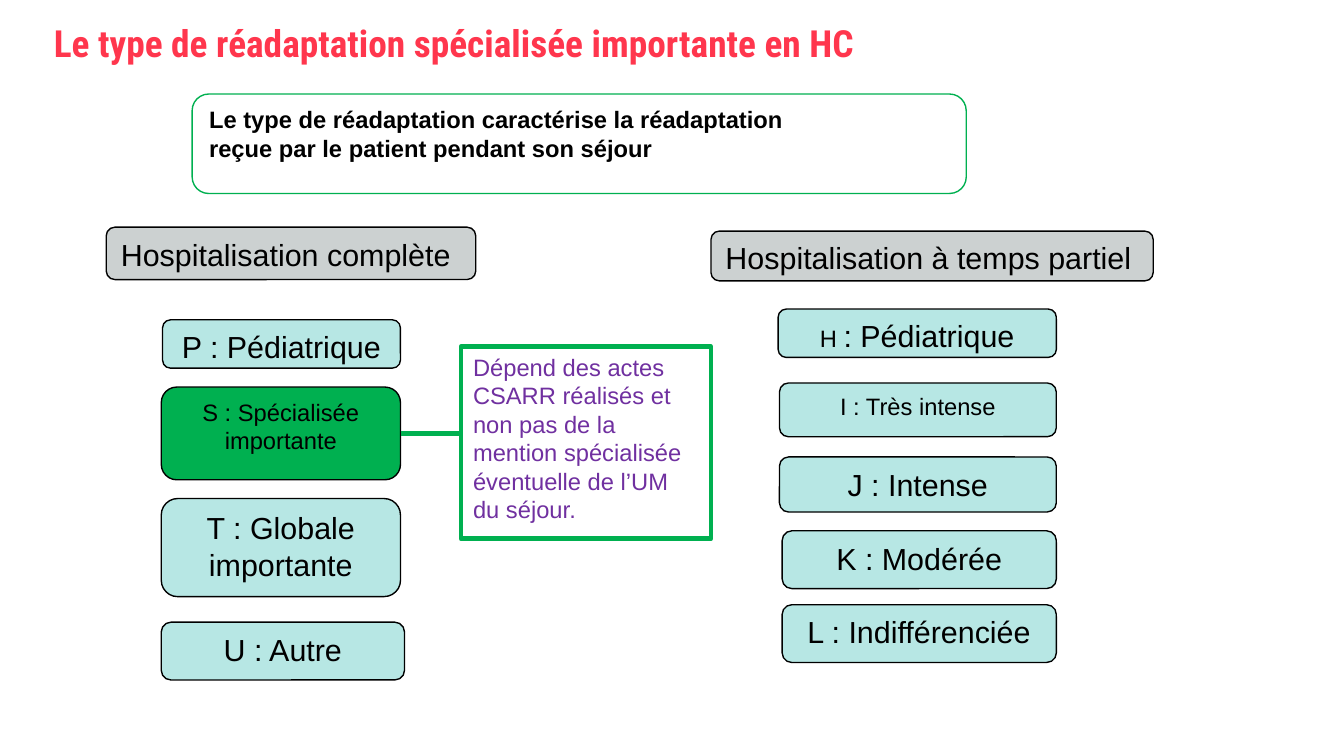
from dataclasses import dataclass

from lxml.etree import SubElement
from pptx import Presentation
from pptx.dml.color import RGBColor
from pptx.enum.shapes import MSO_CONNECTOR, MSO_SHAPE
from pptx.enum.text import MSO_ANCHOR, PP_ALIGN
from pptx.oxml.ns import qn
from pptx.util import Inches, Pt


@dataclass(frozen=True)
class Theme:
    """Colours, fonts and sizes of the slide."""
    red: str = "FF364D"
    green: str = "00B050"
    grey: str = "CCD1D1"
    aqua: str = "B7E7E4"
    purple: str = "7030A0"
    black: str = "000000"
    head_font: str = "Roboto Condensed"
    body_font: str = "Arial"
    title: float = 20
    large: float = 16.3
    small: float = 12.7
    thin: float = 0.75
    frame: float = 2.5
    link: float = 3


T = Theme()
WIDTH = 10
HEIGHT = WIDTH * 9 / 16
COLS = 100


def grid(n):
    """Return the length of n cells of the square grid."""
    return Inches(n * WIDTH / COLS)


def add_text(p, text, size=T.large, font=T.body_font, color=T.black, bold=False):
    """Add one formatted run to a paragraph."""
    r = p.add_run()
    r.text = text
    r.font.size, r.font.name, r.font.bold = Pt(size), font, bold
    r.font.color.rgb = RGBColor.from_string(color)


def set_frame(tf):
    """Wrap the text from the top, with even insets."""
    tf.word_wrap = True
    tf.vertical_anchor = MSO_ANCHOR.TOP
    tf.margin_left = tf.margin_right = grid(0.9)
    tf.margin_top = tf.margin_bottom = grid(0.45)


def add_box(s, x, y, w, h, lines=(), fill=None, line=T.black, weight=T.thin,
            align=PP_ALIGN.LEFT, kind=MSO_SHAPE.ROUNDED_RECTANGLE, **fmt):
    """Add an outlined box with one paragraph for each line."""
    sp = s.shapes.add_shape(kind, grid(x), grid(y), grid(w), grid(h))
    sp.shadow.inherit = False
    if fill:
        sp.fill.solid()
        sp.fill.fore_color.rgb = RGBColor.from_string(fill)
    else:
        sp.fill.background()
    sp.line.color.rgb = RGBColor.from_string(line)
    sp.line.width = Pt(weight)
    tf = sp.text_frame
    set_frame(tf)
    for i, text in enumerate(lines):
        p = tf.add_paragraph() if i else tf.paragraphs[0]
        p.alignment = align
        add_text(p, text, **fmt)
    return sp


def add_type(s, x, y, w, h, text, fill=T.aqua, size=T.large):
    """Add a centred box for one type of rehabilitation."""
    return add_box(s, x, y, w, h, [text], fill, align=PP_ALIGN.CENTER, size=size)


def add_title(s, text):
    """Place and fill the title placeholder."""
    sp = s.shapes.title
    sp.left, sp.top, sp.width, sp.height = grid(3.1), 0, grid(96.1), grid(5)
    set_frame(sp.text_frame)
    p = sp.text_frame.paragraphs[0]
    p.alignment, p.line_spacing = PP_ALIGN.LEFT, Pt(31.8)
    add_text(p, text, T.title, T.head_font, T.red, True)


def add_link(s, start, end):
    """Draw a level line from the right side of start to the left edge of end."""
    y = start.top + start.height // 2
    c = s.shapes.add_connector(MSO_CONNECTOR.STRAIGHT, start.left + start.width, y, end.left, y)
    c.begin_connect(start, 3)
    c.line.color.rgb = RGBColor.from_string(T.green)
    c.line.width = Pt(T.link)
    SubElement(c._element.spPr, qn("a:effectLst"))


def add_full_stay(s):
    """Add the types of full hospitalisation and return the specialised one."""
    add_box(s, 7.9, 16.9, 27.5, 3.9, ["Hospitalisation complète"], T.grey)
    add_type(s, 12.1, 23.8, 17.7, 3.6, "P : Pédiatrique")
    special = add_type(s, 12, 28.8, 17.8, 6.9, "S : Spécialisée importante", T.green, T.small)
    add_type(s, 12, 37.1, 17.8, 7.3, "T : Globale importante")
    add_type(s, 12, 46.3, 18.1, 4.3, "U : Autre")
    return special


def add_part_time(s):
    """Add the types of part-time hospitalisation at equal steps."""
    add_box(s, 52.9, 17.2, 32.9, 3.7, ["Hospitalisation à temps partiel"], T.grey)
    top, step, right = 23, 5.5, 78.6
    types = [
        (57.9, 3.6, "H ", T.small),
        (58, 4, "I : Très intense", T.small),
        (58, 4.1, "J : Intense", T.large),
        (58.2, 4.3, "K : Modérée", T.large),
        (58.2, 4.3, "L : Indifférenciée", T.large),
    ]
    boxes = [add_type(s, x, top + i * step, right - x, h, text, size=size)
             for i, (x, h, text, size) in enumerate(types)]
    add_text(boxes[0].text_frame.paragraphs[0], ": Pédiatrique")


def main():
    """Build and save the slide."""
    prs = Presentation()
    prs.slide_width, prs.slide_height = Inches(WIDTH), Inches(HEIGHT)
    s = prs.slides.add_slide(prs.slide_layouts[5])
    add_title(s, "Le type de réadaptation spécialisée importante en HC")
    add_box(s, 14.3, 7, 57.6, 7.4,
            ["Le type de réadaptation caractérise la réadaptation",
             "reçue par le patient pendant son séjour"],
            line=T.green, size=T.small, bold=True)
    special = add_full_stay(s)
    add_part_time(s)
    note = add_box(s, 34.3, 25.8, 18.6, 14.3,
                   ["Dépend des actes", "CSARR réalisés et", "non pas de la",
                    "mention spécialisée", "éventuelle de l’UM", "du séjour."],
                   line=T.green, weight=T.frame, kind=MSO_SHAPE.RECTANGLE,
                   size=T.small, color=T.purple)
    add_link(s, special, note)
    prs.save("out.pptx")


if __name__ == "__main__":
    main()
